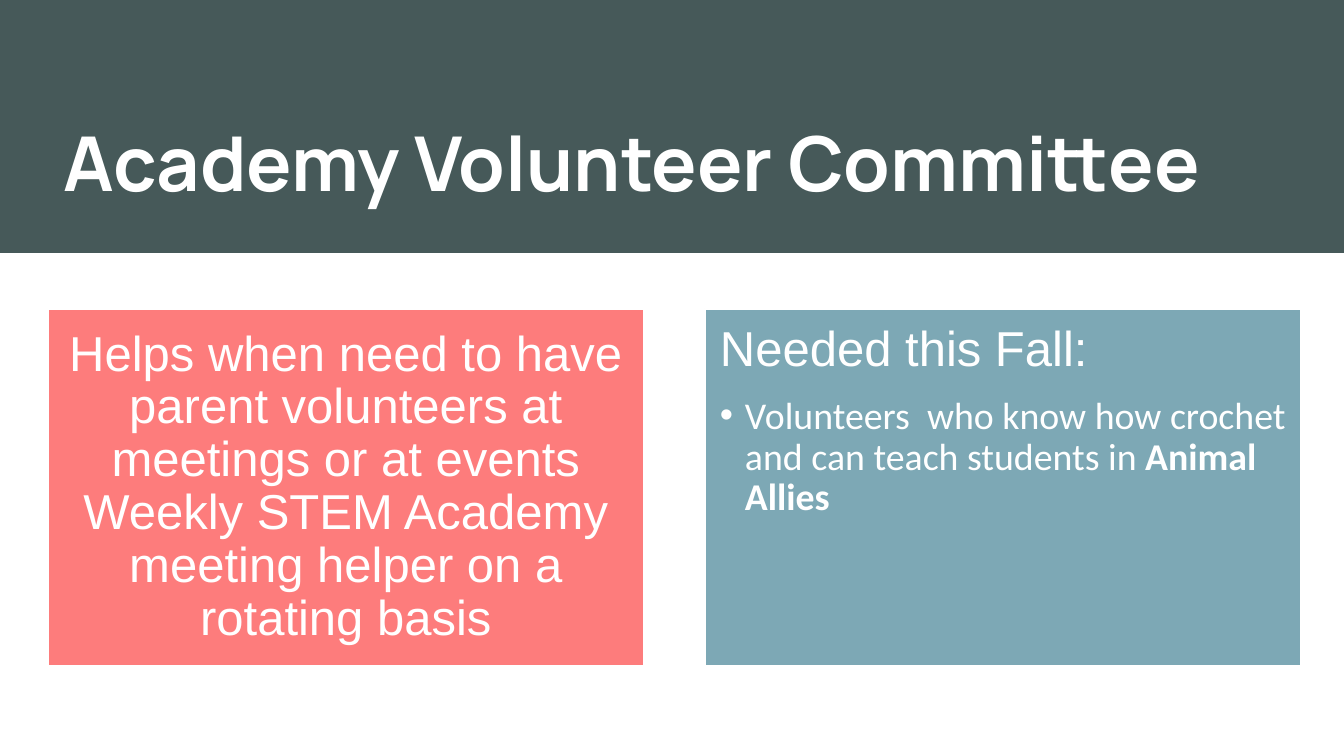
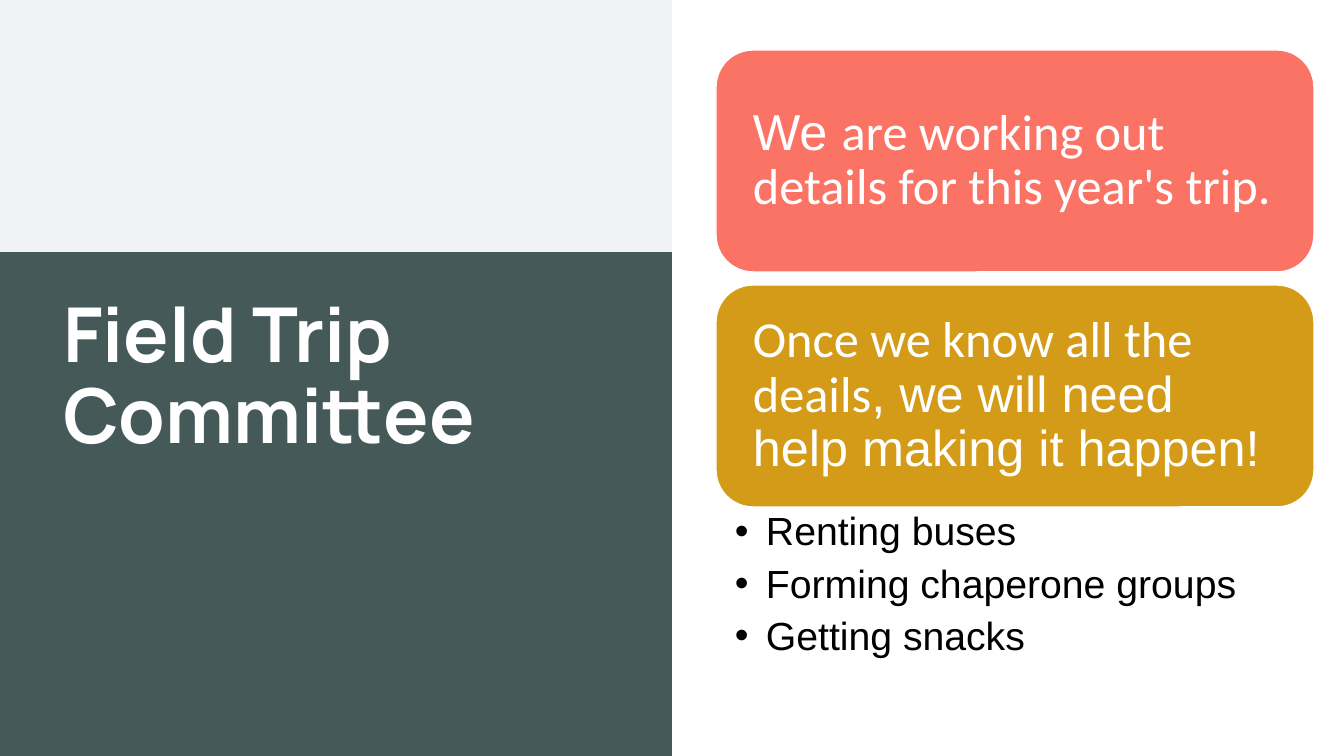
from lxml import etree
from pptx import Presentation
from pptx import util as u
from pptx.dml.color import RGBColor
from pptx.enum import shapes, text
from pptx.oxml import ns

SLIDE_W, SLIDE_H, BAND_H = 1344, 756, 252
PX = u.Inches(1) / 100.8

SLATE = RGBColor(0x46, 0x59, 0x59)
MIST = RGBColor(0xF0, 0xF3, 0xF3)
ROSE = RGBColor(0xFD, 0x7C, 0x7C)
BLUE = RGBColor(0x7D, 0xA8, 0xB5)
CORAL = RGBColor(0xFB, 0x73, 0x65)
GOLD = RGBColor(0xD3, 0x9B, 0x17)
WHITE = RGBColor(0xFF, 0xFF, 0xFF)
BLACK = RGBColor(0, 0, 0)

HEADING, SANS, HUMANIST = "Manrope", "Arial", "Calibri"
TWO_LISTS, ONE_LIST = 3, 1
LEFT, CENTER = text.PP_ALIGN.LEFT, text.PP_ALIGN.CENTER
TOP, MIDDLE, BOTTOM = (text.MSO_ANCHOR.TOP, text.MSO_ANCHOR.MIDDLE,
                       text.MSO_ANCHOR.BOTTOM)


def px(length):
    return u.Emu(round(length * PX))


class Deck:
    def __init__(self):
        self.prs = Presentation()
        self.prs.slide_width, self.prs.slide_height = px(SLIDE_W), px(SLIDE_H)
        self.slide = None

    def new_slide(self, layout):
        self.slide = self.prs.slides.add_slide(self.prs.slide_layouts[layout])

    def place(self, holder, box):
        holder.left, holder.top, holder.width, holder.height = map(px, box)

    def paint(self, shape, fill, edge=None):
        shape.fill.solid()
        shape.fill.fore_color.rgb = fill
        if edge is None:
            shape.line.fill.background()
        else:
            shape.line.color.rgb = edge
            shape.line.width = u.Pt(1)

    def frame(self, shape, insets, anchor):
        frame = shape.text_frame
        frame.word_wrap = True
        frame.auto_size = text.MSO_AUTO_SIZE.NONE
        frame.vertical_anchor = anchor
        (frame.margin_left, frame.margin_top,
         frame.margin_right, frame.margin_bottom) = map(px, insets)
        return frame

    def style(self, paragraph, size, color, font, bold=False, align=LEFT, after=0):
        paragraph.alignment = align
        paragraph.line_spacing = 0.9
        paragraph.space_before, paragraph.space_after = u.Pt(0), u.Pt(after)
        for run in paragraph.runs:
            run.font.size, run.font.name, run.font.bold = u.Pt(size), font, bold
            run.font.color.rgb = color

    def bullet(self, paragraph, indent):
        paragraph.level = 1 if indent else 0
        props = paragraph._p.get_or_add_pPr()
        props.set("marL", str(px(indent)))
        props.set("indent", str(-px(indent)))
        if indent:
            etree.SubElement(props, ns.qn("a:buFont")).set("typeface", SANS)
            etree.SubElement(props, ns.qn("a:buChar")).set("char", "•")
        else:
            etree.SubElement(props, ns.qn("a:buNone"))

    def band(self, box, fill):
        band = self.slide.shapes.add_shape(shapes.MSO_SHAPE.RECTANGLE, *map(px, box))
        band.shadow.inherit = False
        self.paint(band, fill)
        band.element.getparent().insert(2, band.element)

    def title(self, wording, box, anchor):
        title = self.slide.shapes.title
        self.place(title, box)
        frame = self.frame(title, (10, 5, 10, 5), anchor)
        frame.text = wording
        self.style(frame.paragraphs[0], 54, WHITE, HEADING, bold=True)

    def body(self, index, box, lines, insets, anchor=TOP, fill=None):
        body = self.slide.placeholders[index]
        self.place(body, box)
        if fill is not None:
            self.paint(body, fill, WHITE)
        frame = self.frame(body, insets, anchor)
        frame.paragraphs[0].text = lines[0]
        for line in lines[1:]:
            frame.add_paragraph().text = line
        return frame.paragraphs

    def card(self, box, fill, parts):
        card = self.slide.shapes.add_shape(
            shapes.MSO_SHAPE.ROUNDED_RECTANGLE, *map(px, box))
        card.shadow.inherit = False
        self.paint(card, fill, WHITE)
        paragraph = self.frame(card, (26, 26, 26, 26), MIDDLE).paragraphs[0]
        for wording, _ in parts:
            paragraph.add_run().text = wording
        self.style(paragraph, 36, WHITE, SANS)
        for run, (_, font) in zip(paragraph.runs, parts):
            run.font.name = font


def volunteer_slide(deck):
    deck.new_slide(TWO_LISTS)
    deck.band((0, 0, SLIDE_W, BAND_H + 1), SLATE)
    deck.title("Academy Volunteer Committee", (53, 40, 1199, 173), BOTTOM)
    insets = (15, 15, 15, 15)
    role, = deck.body(
        1, (48, 309, 596, 357),
        ["Helps when need to have parent volunteers at meetings or at events\n"
         "Weekly STEM Academy meeting helper on a rotating basis"],
        insets, MIDDLE, ROSE)
    deck.style(role, 35, WHITE, SANS, align=CENTER)
    deck.bullet(role, 0)

    needed, crochet = deck.body(
        2, (705, 309, 596, 357),
        ["Needed this Fall:",
         "Volunteers  who know how crochet and can teach students in "],
        insets, TOP, BLUE)
    deck.style(needed, 35, WHITE, SANS, after=14)
    deck.bullet(needed, 0)
    crochet.add_run().text = "Animal Allies"
    deck.style(crochet, 27, WHITE, HUMANIST)
    crochet.runs[-1].font.bold = True
    deck.bullet(crochet, 25)


def field_trip_slide(deck):
    deck.new_slide(ONE_LIST)
    half = SLIDE_W // 2
    deck.band((0, 0, half, BAND_H), MIST)
    deck.band((0, BAND_H, half, SLIDE_H - BAND_H), SLATE)
    deck.title("Field Trip Committee", (53, 292, 562, 400), TOP)
    cards = [
        (CORAL, [("We ", SANS),
                 ("are working out details for this year's trip.", HUMANIST)]),
        (GOLD, [("Once we know all the deails", HUMANIST),
                (", we will need help making it happen!", SANS)]),
    ]
    for row, (fill, parts) in enumerate(cards):
        deck.card((716, 50 + 235 * row, 598, 222), fill, parts)
    tasks = deck.body(
        1, (716, 507, 598, 160),
        ["Renting buses", "Forming chaperone groups", "Getting snacks"],
        (19, 5, 28, 5))
    for task in tasks:
        deck.style(task, 28, BLACK, SANS, after=7)
        deck.bullet(task, 31)


def main():
    deck = Deck()
    volunteer_slide(deck)
    field_trip_slide(deck)
    deck.prs.save("out.pptx")


if __name__ == "__main__":
    main()
